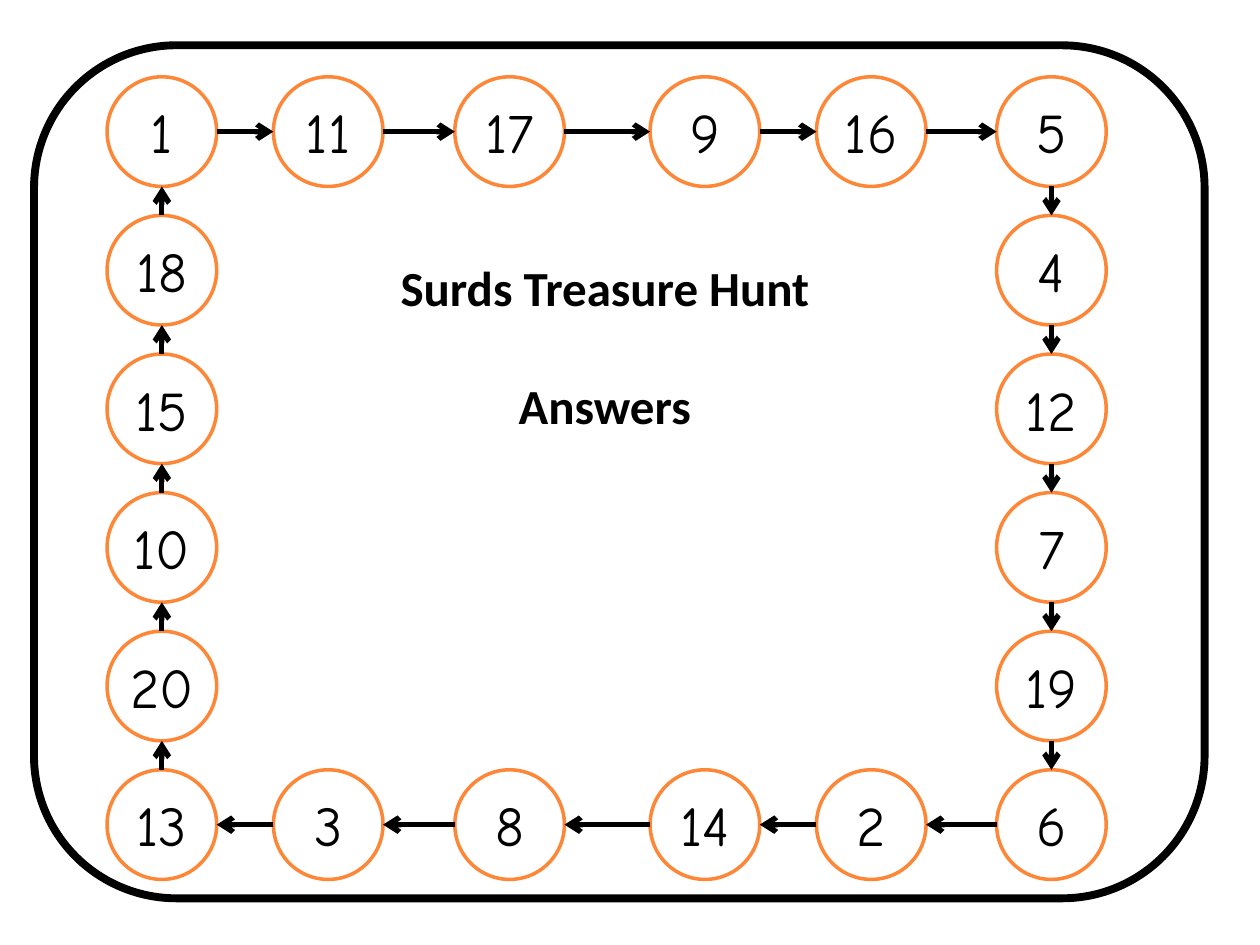
from lxml import etree
from pptx import Presentation
from pptx.dml.color import RGBColor
from pptx.enum import shapes, text
from pptx.oxml import ns
from pptx.util import Inches, Pt

BLACK, WHITE, ORANGE = "000000", "FFFFFF", "FE8637"
SIZE = 0.87
COLS = [0, 1.32, 2.76, 4.31, 5.63, 7.06]
ROWS = [1.1 * i for i in range(6)]
STOPS = [1, 11, 17, 9, 16, 5, 4, 12, 7, 19, 6, 2, 14, 8, 3, 13, 20, 10, 15, 18]


def color(code):
    """Turn a hex string into a colour."""
    return RGBColor.from_string(code)


def write(frame, lines, font, size, bold=False, gap=0, wrap=True, anchor=text.MSO_ANCHOR.TOP):
    """Fill a text frame with centred lines, spaced by gap points."""
    frame.word_wrap = wrap
    frame.auto_size = text.MSO_AUTO_SIZE.NONE
    frame.vertical_anchor = anchor
    frame.text = "\n".join(lines)
    for i, para in enumerate(frame.paragraphs):
        para.alignment = text.PP_ALIGN.CENTER
        para.line_spacing = 1.0
        para.space_before = Pt(gap if i else 0)
        para.font.name = font
        para.font.size = Pt(size)
        para.font.bold = bold
        para.font.color.rgb = color(BLACK)


def shape(slide, kind, box, line, width, fill=None):
    """Add an outlined shape in the box, given in inches."""
    item = slide.shapes.add_shape(kind, *map(Inches, box))
    item.shadow.inherit = False
    item.line.color.rgb = color(line)
    item.line.width = Pt(width)
    if fill:
        item.fill.solid()
        item.fill.fore_color.rgb = color(fill)
    else:
        item.fill.background()
    return item


def arrow(slide, start, end):
    """Join the rims of two circles, given by their centres, with an arrow."""
    (x1, y1), (x2, y2) = start, end
    part = SIZE / 2 / (abs(x2 - x1) + abs(y2 - y1))
    dx, dy = (x2 - x1) * part, (y2 - y1) * part
    ends = (x1 + dx, y1 + dy, x2 - dx, y2 - dy)
    link = slide.shapes.add_connector(shapes.MSO_CONNECTOR.STRAIGHT, *map(Inches, ends))
    link.line.color.rgb = color(BLACK)
    link.line.width = Pt(3)
    etree.SubElement(link.line._get_or_add_ln(), ns.qn("a:tailEnd"), type="arrow")
    etree.SubElement(link._element.spPr, ns.qn("a:effectLst"))


def frame(slide, box):
    """Draw the rounded border."""
    item = shape(slide, shapes.MSO_SHAPE.ROUNDED_RECTANGLE, box, BLACK, 4.5)
    item.adjustments[0] = 0.167


def ring(slide, left, top):
    """Place the numbered stops clockwise and join each to the next."""
    spots = [(x, ROWS[0]) for x in COLS]
    spots += [(COLS[-1], y) for y in ROWS[1:-1]]
    spots += [(x, ROWS[-1]) for x in reversed(COLS)]
    spots += [(COLS[0], y) for y in reversed(ROWS[1:-1])]
    for stop, (x, y) in zip(STOPS, spots):
        box = (left + x, top + y, SIZE, SIZE)
        item = shape(slide, shapes.MSO_SHAPE.OVAL, box, ORANGE, 2, WHITE)
        write(item.text_frame, [str(stop)], "Comic Neue", 32,
              wrap=False, anchor=text.MSO_ANCHOR.MIDDLE)
    mids = [(left + x + SIZE / 2, top + y + SIZE / 2) for x, y in spots]
    for start, end in zip(mids, mids[1:] + mids[:1]):
        arrow(slide, start, end)


def title(slide, box):
    """Move and format the slide title."""
    item = slide.shapes.title
    item.left, item.top, item.width, item.height = map(Inches, box)
    write(item.text_frame, ["Surds Treasure Hunt", "Answers"], "Calibri", 28,
          bold=True, gap=34)


def main():
    """Build and save the slide."""
    deck = Presentation()
    deck.slide_width, deck.slide_height = Inches(10), Inches(7.5)
    slide = deck.slides.add_slide(deck.slide_layouts[5])
    frame(slide, (0.27, 0.36, 9.29, 6.77))
    ring(slide, 0.85, 0.61)
    title(slide, (2.87, 1.99, 3.86, 1.51))
    deck.save("out.pptx")


if __name__ == "__main__":
    main()
